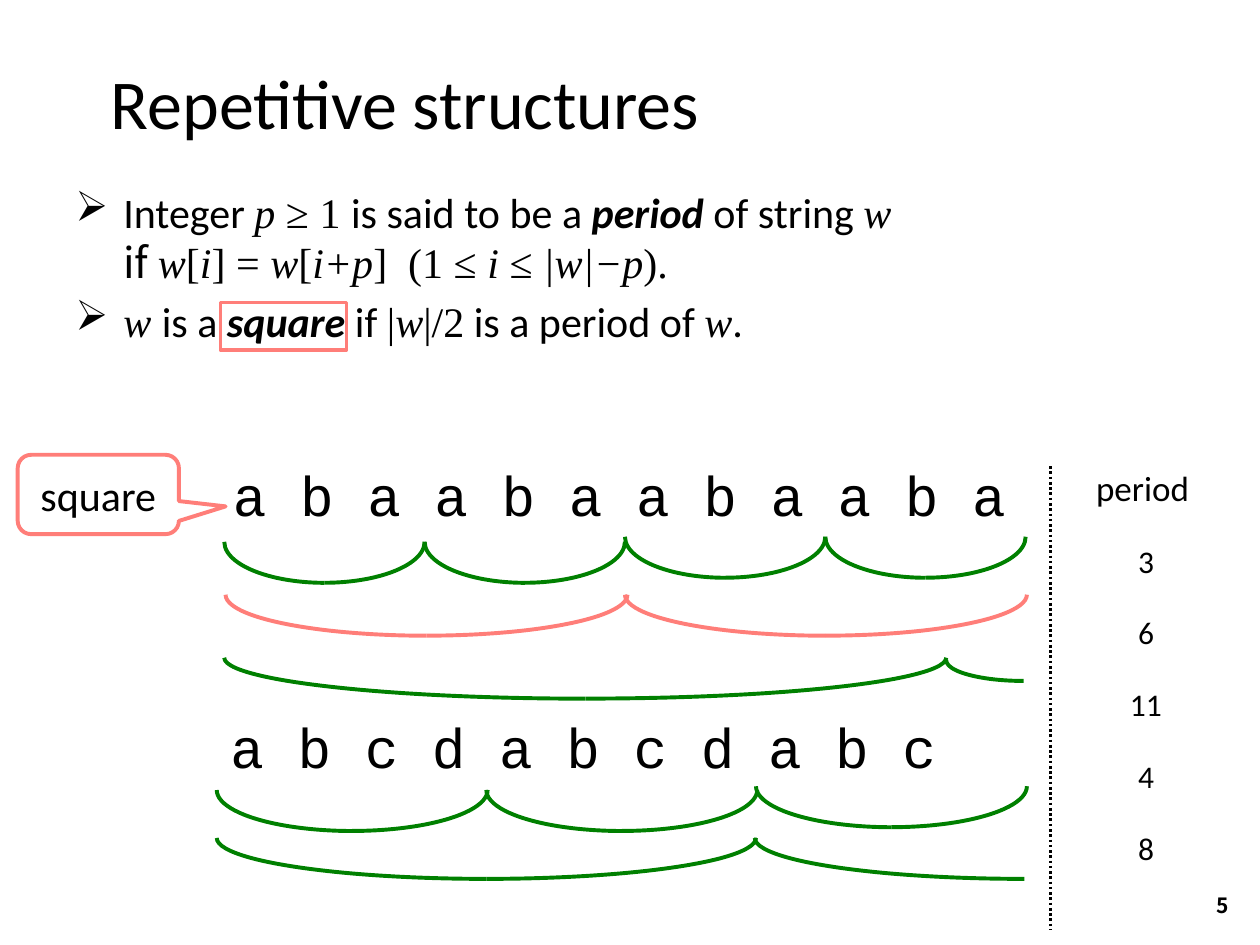
from dataclasses import dataclass
from typing import Any

from lxml import etree
from pptx import Presentation
from pptx import util as u
from pptx.dml.color import RGBColor
from pptx.enum import dml, shapes, text
from pptx.oxml.ns import qn

SANS, SERIF, MONO, CJK = "Calibri", "Times New Roman", "Courier New", "Noto Sans CJK JP"
GREEN, RED, BLACK = "008000", "FF7E79", "000000"
CENTER, RIGHT = text.PP_ALIGN.CENTER, text.PP_ALIGN.RIGHT
MIDDLE, TOP = text.MSO_ANCHOR.MIDDLE, text.MSO_ANCHOR.TOP


def color(value):
    return RGBColor.from_string(value)


@dataclass
class Sketch:
    """Draws elements on the current slide in one shared style."""
    s: Any
    ink: str = BLACK
    line_width: float = 2.25

    def run(self, p, words, size, font=SANS, style=""):
        r = p.add_run()
        r.text = words
        r.font.size, r.font.name = u.Pt(size), font
        r.font.bold, r.font.italic = "b" in style, "i" in style
        r.font.color.rgb = color(self.ink)

    def title(self, box, words):
        sp = self.s.shapes.title
        sp.left, sp.top, sp.width, sp.height = map(u.Inches, box)
        sp.text_frame.vertical_anchor = MIDDLE
        p = sp.text_frame.paragraphs[0]
        p.alignment = text.PP_ALIGN.LEFT
        self.run(p, words, 40)

    def textbox(self, box, wrap=True, anchor=TOP):
        tf = self.s.shapes.add_textbox(*map(u.Inches, box)).text_frame
        tf.word_wrap, tf.vertical_anchor = wrap, anchor
        return tf

    def label(self, box, words, size, font=SANS, style="", wrap=True, align=None, anchor=TOP):
        p = self.textbox(box, wrap, anchor).paragraphs[0]
        p.alignment = align
        self.run(p, words, size, font, style)

    def bullets(self, box, items, size=24, indent=0.38):
        tf = self.textbox(box)
        for i, lines in enumerate(items):
            p = tf.add_paragraph() if i else tf.paragraphs[0]
            pPr = p._p.get_or_add_pPr()
            pPr.set("marL", str(u.Inches(indent)))
            pPr.set("indent", str(-u.Inches(indent)))
            etree.SubElement(pPr, qn("a:buChar")).set("char", "➢")
            p.space_before = u.Pt(0.2 * size if i else 0)
            for j, runs in enumerate(lines):
                if j:
                    p.add_line_break()
                for words, *look in runs:
                    self.run(p, words, size, *look)

    def outline(self, kind, box, line, width=None):
        sp = self.s.shapes.add_shape(kind, *map(u.Inches, box))
        sp.shadow.inherit = False
        sp.fill.background()
        sp.line.color.rgb = color(line)
        sp.line.width = u.Pt(width or self.line_width)
        return sp

    def callout(self, box, words, line, adjustments):
        sp = self.outline(shapes.MSO_SHAPE.ROUNDED_RECTANGULAR_CALLOUT, box, line)
        for i, value in enumerate(adjustments):
            sp.adjustments[i] = value
        sp.text_frame.vertical_anchor = MIDDLE
        p = sp.text_frame.paragraphs[0]
        p.alignment = CENTER
        self.run(p, words, 24)

    def cup(self, x, y, width, line=GREEN, height=0.65, whole=True):
        box = (x + (width - height) / 2, y - width / 2, height, width)
        for left_half in (False, True) if whole else (True,):
            sp = self.outline(shapes.MSO_SHAPE.ARC, box, line)
            sp.rotation = 90
            if left_half:
                sp._element.spPr.find(qn("a:xfrm")).set("flipV", "1")

    def dotted(self, x, top, bottom):
        c = self.s.shapes.add_connector(
            shapes.MSO_CONNECTOR.STRAIGHT, *map(u.Inches, (x, top, x, bottom)))
        c.line.color.rgb = color(self.ink)
        c.line.width = u.Pt(1.5)
        c.line.dash_style = dml.MSO_LINE.ROUND_DOT
        etree.SubElement(c._element.spPr, qn("a:effectLst"))


DEFINITIONS = [
    [
        [("Integer ",), ("p ", SERIF, "i"), ("≥ 1 ", SERIF), ("is said to be a ",),
         ("period", SANS, "bi"), (" of string ",), ("w ", SERIF, "i")],
        [("if ", CJK), ("w", SERIF, "i"), ("[", SERIF), ("i", SERIF, "i"), ("] = ", SERIF),
         ("w", SERIF, "i"), ("[", SERIF), ("i+p", SERIF, "i"), ("]  (1 ≤ ", SERIF),
         ("i ", SERIF, "i"), ("≤ ", SERIF), ("|w|−p", SERIF, "i"), (").", SERIF)],
    ],
    [
        [("w ", SERIF, "i"), ("is a ",), ("square", SANS, "bi"), (" if ",), ("|", SERIF),
         ("w", SERIF, "i"), ("|/2", SERIF), (" is a period of ",), ("w", SERIF, "i"), (".",)],
    ],
]


def main():
    prs = Presentation()
    prs.slide_width, prs.slide_height = u.Inches(10), u.Inches(7.5)
    d = Sketch(prs.slides.add_slide(prs.slide_layouts[5]))

    d.title((0.78, 0.3, 8.72, 1.01), "Repetitive structures")
    d.bullets((0.5, 1.43, 9.22, 2.04), DEFINITIONS)
    d.outline(shapes.MSO_SHAPE.RECTANGLE, (1.75, 2.4, 1, 0.38), RED, 2)
    d.label((9.17, 6.98, 0.68, 0.4), "5", 12, CJK, "b", align=RIGHT, anchor=MIDDLE)

    d.label((1.75, 3.61, 6.67, 0.64), "a b a a b a a b a a b a", 32, MONO)
    for i, y in enumerate((4.3, 4.3, 4.26, 4.26)):
        d.cup(1.78 + 1.59 * i, y, 1.59)
    for x in (1.79, 4.96):
        d.cup(x, 4.72, 3.19, RED)
    d.cup(1.78, 5.22, 5.73)
    d.cup(7.51, 5.24, 1.23, height=0.33, whole=False)

    d.label((1.73, 5.61, 6.39, 0.64), "a b c d a b c d a b c", 32, MONO)
    for i, y in enumerate((6.27, 6.27, 6.24)):
        d.cup(1.72 + 2.14 * i, y, 2.15)
    d.cup(1.72, 6.65, 4.28)
    d.cup(5.99, 6.65, 4.28, whole=False)

    d.callout((0.14, 3.61, 1.28, 0.63), "square", RED, (0.79, 0.15, 0.17))
    d.dotted(8.34, 3.7, 7.38)
    d.label((8.6, 3.65, 1.01, 0.44), "period", 20, wrap=False)
    for i, period in enumerate((3, 6, 11, 4, 8)):
        width = 0.33 if period < 10 else 0.46
        d.label((9.1 - width / 2, 4.25 + 0.57 * i, width, 0.4), str(period), 18, wrap=False)

    prs.save("out.pptx")


if __name__ == "__main__":
    main()
